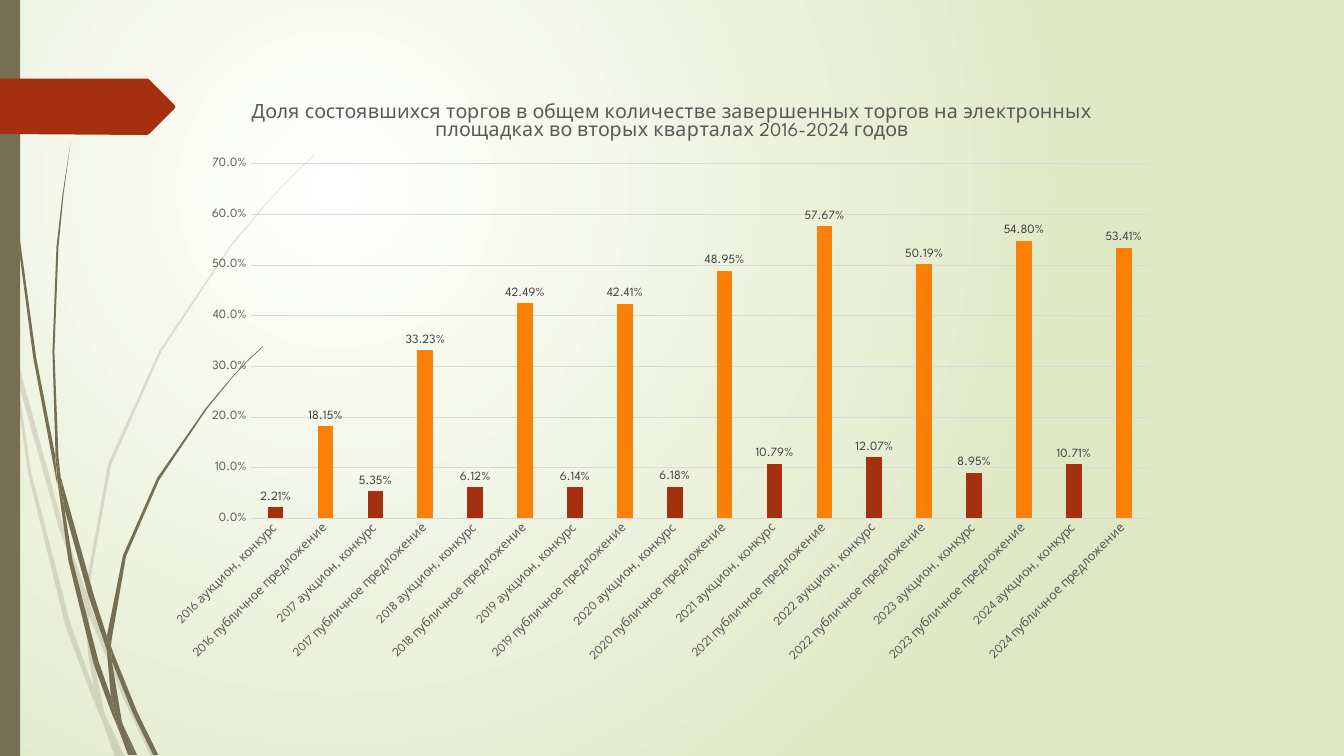
from pptx import Presentation
from pptx.chart.data import CategoryChartData
from pptx.dml.color import RGBColor
from pptx.enum.chart import XL_CHART_TYPE as ChartType
from pptx.enum.chart import XL_LABEL_POSITION as LabelPosition
from pptx.enum.chart import XL_TICK_MARK as TickMark
from pptx.enum.shapes import MSO_SHAPE as Shape
from pptx.oxml import parse_xml
from pptx.oxml.ns import nsdecls, qn
from pptx.util import Inches, Pt

FONT = "League Spartan"
OLIVE, RUST, ORANGE = "766F54", "A53010", "FB8005"
TEXT_GREY, LABEL_GREY, RULE_GREY = "595959", "404040", "D9D9D9"

TITLE = ("Доля состоявшихся торгов в общем количестве завершенных торгов "
         "на электронных площадках во вторых кварталах 2016-2024 годов")
SALE_KINDS = ["аукцион, конкурс", "публичное предложение"]
SHARES = {  # year: (auction or contest, public offer)
    2016: (0.0221, 0.1815), 2017: (0.0535, 0.3323), 2018: (0.0612, 0.4249),
    2019: (0.0614, 0.4241), 2020: (0.0618, 0.4895), 2021: (0.1079, 0.5767),
    2022: (0.1207, 0.5019), 2023: (0.0895, 0.5480), 2024: (0.1071, 0.5341),
}

# Outlines of the grass blades, in inches from the corner of their region
PALE_BLADES = [
    [(.11, 3.5), (.09, 3.22), (0, 2.82), (0, 2.99), (.1, 3.44)],
    [(.58, 5.22), (.84, 5.99), (.85, 5.86), (.62, 5.2), (.14, 3.45), (.17, 3.76)],
    [(.92, 6.07), (.88, 5.96), (.88, 6.1), (1.23, 6.94), (1.5, 7.51),
     (1.55, 7.51), (1.27, 6.92)],
    [(1.19, 7.51), (1.24, 7.51), (1.05, 7.11)],
    [(.93, 6.83), (.7, 6.19), (.31, 4.69), (.17, 3.76), (.11, 3.5), (.28, 4.7),
     (.65, 6.21), (.92, 6.93), (1.01, 7.14), (.99, 7.07)],
    [(.84, 5.99), (.87, 6.46), (.93, 6.83), (.96, 6.92), (1.05, 7.11),
     (1.03, 7.06), (.91, 6.46), (.88, 6.1), (.88, 6.08)],
    [(.88, 5.84), (1.1, 4.62), (1.6, 3.49), (2.29, 2.45), (2.68, 1.98),
     (2.9, 1.75), (3.12, 1.54), (3.12, 1.53), (2.89, 1.75), (2.68, 1.97),
     (2.28, 2.44), (1.58, 3.48), (1.07, 4.61), (.85, 5.84), (.85, 5.86), (.88, 5.96)],
    [(1.01, 7.14), (1.14, 7.51), (1.19, 7.51)],
    [(.88, 6.08), (.88, 6.1), (.88, 5.96), (.85, 5.86), (.84, 5.99)],
    [(.96, 6.92), (.93, 6.83), (.99, 7.07), (1.01, 7.14), (1.19, 7.51), (1.05, 7.11)],
]
DARK_BLADES = [
    [(.07, 1.1), (.17, 2.33), (.33, 3.55), (.56, 4.77), (.57, 4.81), (.55, 4.57),
     (.55, 4.53), (.36, 3.55), (.19, 2.32), (.08, 1.09), (.05, .48), (.04, 0),
     (.03, 0), (.04, .48)],
    [(.88, 5.92), (1.06, 6.45), (1.06, 6.31), (.93, 5.9), (.6, 4.72), (.64, 5.05)],
    [(1.13, 6.49), (1.1, 6.41), (1.11, 6.56), (1.32, 7.08), (1.52, 7.49),
     (1.57, 7.49), (1.36, 7.06)],
    [(1.1, 6.91), (.98, 6.57), (.72, 5.56), (.64, 5.05), (.57, 4.77), (.68, 5.57),
     (.93, 6.59), (1.11, 7.08), (1.17, 7.22), (1.16, 7.17)],
    [(.6, 4.72), (.58, 4.53), (.54, 3.49), (.58, 2.45), (.63, 1.93), (.7, 1.41),
     (.62, 1.93), (.56, 2.45), (.52, 3.49), (.55, 4.49)],
    [(1.33, 7.49), (1.36, 7.49), (1.22, 7.19)],
    [(.57, 4.77), (.64, 5.05), (.6, 4.72), (.55, 4.49), (.55, 4.53)],
    [(1.11, 6.33), (1.25, 5.52), (1.58, 4.76), (2.05, 4.06), (2.31, 3.74),
     (2.45, 3.59), (2.61, 3.44), (2.6, 3.44), (2.45, 3.58), (2.31, 3.73),
     (2.04, 4.05), (1.56, 4.74), (1.22, 5.51), (1.06, 6.31), (1.1, 6.41)],
    [(1.17, 7.22), (1.27, 7.49), (1.31, 7.49)],
    [(1.06, 6.45), (1.1, 6.91), (1.16, 7.06), (1.22, 7.19), (1.21, 7.16),
     (1.11, 6.56), (1.09, 6.51)],
    [(1.06, 6.45), (1.09, 6.51), (1.11, 6.56), (1.1, 6.41), (1.06, 6.31)],
    [(1.16, 7.06), (1.1, 6.91), (1.16, 7.17), (1.17, 7.22), (1.3, 7.49),
     (1.33, 7.49), (1.22, 7.19)],
]
BANNER = [(0, 0), (1.46, 0), (1.48, .01), (1.73, .26), (1.74, .28), (1.73, .3),
          (1.48, .55), (1.46, .56), (0, .55)]


def color(hex_string):
    return RGBColor.from_string(hex_string)


def style_font(font, size, hex_string):
    font.name, font.size, font.bold = FONT, Pt(size), False
    font.color.rgb = color(hex_string)


def write_text(frame, text, size=14, hex_string=TEXT_GREY):
    span = frame.paragraphs[0].add_run()
    span.text = text
    style_font(span.font, size, hex_string)


def paint(shape, hex_string, opacity=100):
    shape.shadow.inherit = False
    shape.line.fill.background()
    shape.fill.solid()
    shape.fill.fore_color.rgb = color(hex_string)
    if opacity < 100:
        tint = shape.fill._xPr.find(".//" + qn("a:srgbClr"))
        tint.append(parse_xml(f'<a:alpha {nsdecls("a")} val="{opacity * 1000}"/>'))


def add_outline(shapes, points, left, top, hex_string, opacity=100):
    corners = [(Inches(left + x), Inches(top + y)) for x, y in points]
    builder = shapes.build_freeform(*corners[0])
    builder.add_line_segments(corners[1:], close=True)
    paint(builder.convert_to_shape(), hex_string, opacity)


def fill_background(page):
    fill = page.background.fill
    fill.gradient()
    for stop, hex_string in zip(fill.gradient_stops, ["FFFFFF", "DFE8C4"]):
        stop.color.rgb = color(hex_string)
    gradient = page._element.find(".//" + qn("a:gradFill"))
    gradient.remove(gradient.find(qn("a:lin")))
    gradient.append(parse_xml(
        f'<a:path {nsdecls("a")} path="circle">'
        '<a:fillToRect l="50000" t="50000" r="100000" b="100000"/></a:path>'))


def add_left_decor(page, left, top, height):
    # Grass blades
    for blades, opacity in [(PALE_BLADES, 20), (DARK_BLADES, 100)]:
        group = page.shapes.add_group_shape()
        for points in blades:
            add_outline(group.shapes, points, left, top, OLIVE, opacity)
    # Side strip and pointed banner
    strip = page.shapes.add_shape(Shape.RECTANGLE, Inches(left), Inches(top),
                                  Inches(0.2), Inches(height))
    paint(strip, OLIVE)
    add_outline(page.shapes, BANNER, left, top + 0.78, RUST)


def style_axes(chart):
    for axis in (chart.category_axis, chart.value_axis):
        axis.major_tick_mark = axis.minor_tick_mark = TickMark.NONE
        style_font(axis.tick_labels.font, 9, TEXT_GREY)
    categories, values = chart.category_axis, chart.value_axis
    categories.format.line.color.rgb = color(RULE_GREY)
    categories.format.line.width = Pt(0.75)
    categories._element.find(".//" + qn("a:bodyPr")).set("rot", "-2700000")
    values.format.line.fill.background()
    values.minimum_scale, values.maximum_scale, values.major_unit = 0, 0.7, 0.1
    values.tick_labels.number_format = "0.0%"
    values.tick_labels.number_format_is_linked = False
    values.major_gridlines.format.line.color.rgb = color(RULE_GREY)
    values.major_gridlines.format.line.width = Pt(0.75)


def style_columns(plot):
    plot.gap_width, plot.overlap, plot.vary_by_categories = 219, -27, False
    series = plot.series[0]
    series.format.fill.solid()
    series.format.fill.fore_color.rgb = color(RUST)
    for index in range(1, 2 * len(SHARES), 2):
        fill = series.points[index].format.fill
        fill.solid()
        fill.fore_color.rgb = color(ORANGE)
    labels = series.data_labels
    labels.show_value, labels.position = True, LabelPosition.OUTSIDE_END
    labels.number_format, labels.number_format_is_linked = "0.00%", False
    style_font(labels.font, 9, LABEL_GREY)


def place_plot(chart, **fractions):
    area = chart._chartSpace.chart.plotArea
    for old in area.findall(qn("c:layout")):
        area.remove(old)
    sizes = "".join(f'<c:{key} val="{value}"/>' for key, value in fractions.items())
    area.insert(0, parse_xml(
        f'<c:layout {nsdecls("c")}><c:manualLayout><c:layoutTarget val="inner"/>'
        f'<c:xMode val="edge"/><c:yMode val="edge"/>{sizes}'
        '</c:manualLayout></c:layout>'))


def add_share_chart(page, left, top, width, height):
    data = CategoryChartData(number_format="0.00%")
    data.categories = [f"{year} {kind}" for year in SHARES for kind in SALE_KINDS]
    data.add_series("Series 1", [share for pair in SHARES.values() for share in pair])
    box = [Inches(length) for length in (left, top, width, height)]
    chart = page.shapes.add_chart(ChartType.COLUMN_CLUSTERED, *box, data).chart
    style_font(chart.font, 10, "000000")
    chart.has_legend = False
    chart.has_title = True
    write_text(chart.chart_title.text_frame, TITLE)
    chart.chart_title.include_in_layout = False
    style_axes(chart)
    style_columns(chart.plots[0])
    place_plot(chart, x=0.112, y=0.139, w=0.827, h=0.598)


def main():
    deck = Presentation()
    deck.slide_width, deck.slide_height = Inches(13.33), Inches(7.5)
    page = deck.slides.add_slide(deck.slide_layouts[6])
    fill_background(page)
    add_left_decor(page, 0, 0, 7.5)
    add_share_chart(page, 1.28, 0.81, 10.77, 5.88)
    deck.save("out.pptx")


if __name__ == "__main__":
    main()
